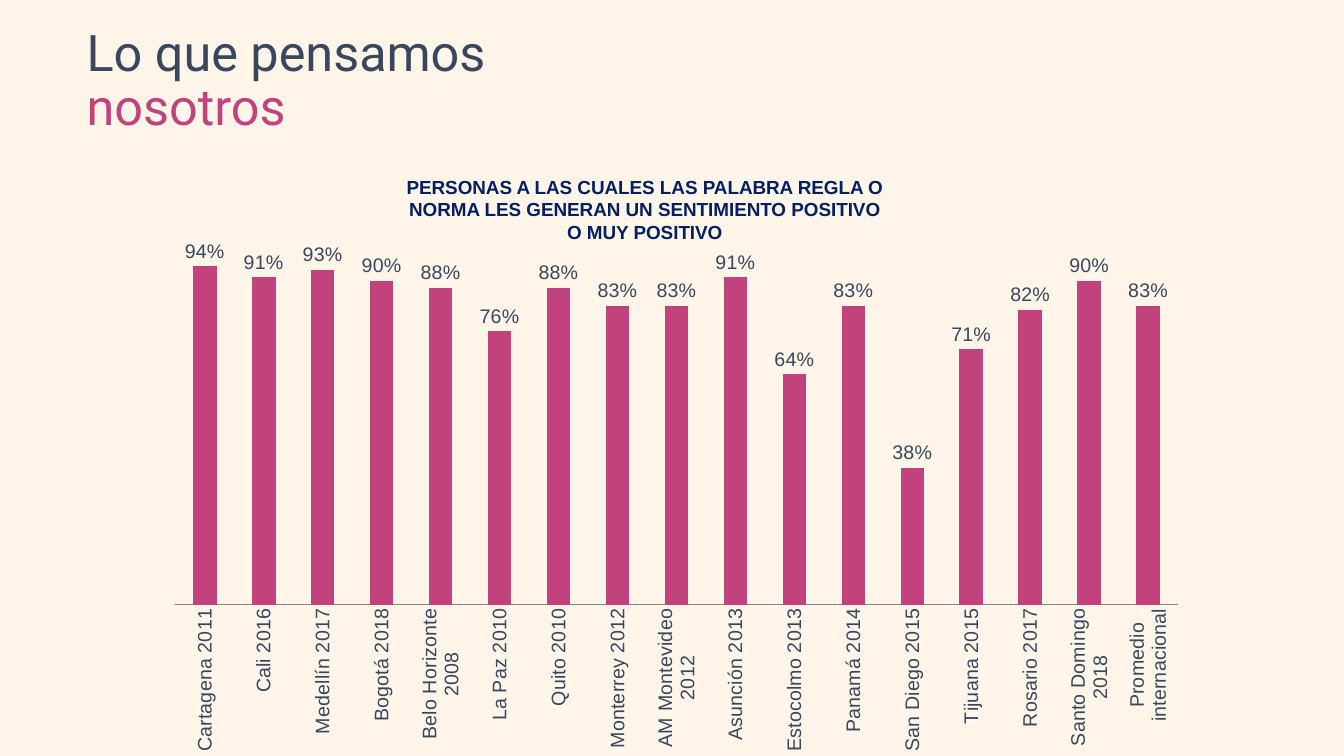
"""Build a slide with a column chart of positive feelings towards rules by city."""
from lxml import etree
from pptx import Presentation
from pptx.chart.data import CategoryChartData
from pptx.dml.color import RGBColor
from pptx.enum.chart import XL_CHART_TYPE, XL_LABEL_POSITION, XL_TICK_MARK
from pptx.enum.text import MSO_ANCHOR, PP_ALIGN
from pptx.oxml.ns import qn
from pptx.util import Inches, Pt

COLUMNS = XL_CHART_TYPE.COLUMN_CLUSTERED
OUTSIDE = XL_LABEL_POSITION.OUTSIDE_END
NO_TICK = XL_TICK_MARK.NONE
MIDDLE = MSO_ANCHOR.MIDDLE
LEFT, CENTER = PP_ALIGN.LEFT, PP_ALIGN.CENTER

CREAM, SLATE, PINK, NAVY, GRAY = "FFF5E9", "38465E", "C2427E", "002060", "868686"
PERCENT = "###0%"

TITLE_LINES = [("Lo que pensamos", SLATE), ("nosotros", PINK)]
HEADING = ("PERSONAS A LAS CUALES LAS PALABRA REGLA O NORMA LES GENERAN "
           "UN SENTIMIENTO POSITIVO O MUY POSITIVO")
CITIES = [
    ("Cartagena 2011", 0.94), ("Cali 2016", 0.91), ("Medellín 2017", 0.93),
    ("Bogotá 2018", 0.90), ("Belo Horizonte 2008", 0.88), ("La Paz 2010", 0.76),
    ("Quito 2010", 0.88), ("Monterrey 2012", 0.83), ("AM Montevideo 2012", 0.83),
    ("Asunción 2013", 0.91), ("Estocolmo 2013", 0.64), ("Panamá 2014", 0.83),
    ("San Diego 2015", 0.38), ("Tijuana 2015", 0.71), ("Rosario 2017", 0.82),
    ("Santo Domingo 2018", 0.90), ("Promedio internacional", 0.83),
]
LONGEST_LINE = 14

TITLE_BOX = (0.76, 0.09, 5.23, 1.45)
HEADING_BOX = (3.9, 1.69, 5, 0.78)
CHART_BOX = (1.53, 2.32, 10.35, 5.24)
PLOT_BOX = (1.74, 2.43, 9.95, 3.57)


def color(value):
    return RGBColor.from_string(value)


def inches(box):
    return [Inches(length) for length in box]


def style(font, name, size, value, bold=False):
    font.name, font.size, font.bold = name, Pt(size), bold
    font.color.rgb = color(value)


def wrap(city):
    return city if len(city) <= LONGEST_LINE else "\n".join(city.rsplit(" ", 1))


def add_title(page):
    title = page.shapes.title
    title.left, title.top, title.width, title.height = inches(TITLE_BOX)
    frame = title.text_frame
    frame.vertical_anchor = MIDDLE
    frame.text = "\n".join(text for text, value in TITLE_LINES)
    for para, (text, value) in zip(frame.paragraphs, TITLE_LINES):
        para.alignment, para.line_spacing = LEFT, 0.9
        style(para.font, "Roboto", 36, value)


def add_heading(page):
    frame = page.shapes.add_textbox(*inches(HEADING_BOX)).text_frame
    frame.word_wrap = True
    para = frame.paragraphs[0]
    para.text, para.alignment = HEADING, CENTER
    style(para.font, "Arial", 13.5, NAVY, bold=True)


def place_plot(chart):
    area = chart.plots[0]._element.getparent()
    for old in area.findall(qn("c:layout")):
        area.remove(old)
    layout = etree.Element(qn("c:layout"))
    area.insert(0, layout)
    manual = etree.SubElement(layout, qn("c:manualLayout"))
    left, top, width, height = CHART_BOX
    plot_left, plot_top, plot_width, plot_height = PLOT_BOX
    settings = {
        "layoutTarget": "inner", "xMode": "edge", "yMode": "edge",
        "x": (plot_left - left) / width, "y": (plot_top - top) / height,
        "w": plot_width / width, "h": plot_height / height,
    }
    for name, value in settings.items():
        etree.SubElement(manual, qn("c:" + name)).set("val", str(value))


def add_chart(page):
    data = CategoryChartData(number_format=PERCENT)
    data.categories = [wrap(city) for city, share in CITIES]
    data.add_series("Series 1", [share for city, share in CITIES])
    chart = page.shapes.add_chart(COLUMNS, *inches(CHART_BOX), data).chart
    chart.has_legend = chart.has_title = False
    style(chart.font, "Arial", 14, SLATE)

    plot = chart.plots[0]
    plot.gap_width, plot.overlap, plot.vary_by_categories = 150, -25, False
    fill = plot.series[0].format.fill
    fill.solid()
    fill.fore_color.rgb = color(PINK)
    plot.has_data_labels = True
    labels = plot.data_labels
    labels.show_value, labels.position = True, OUTSIDE
    labels.number_format, labels.number_format_is_linked = PERCENT, False
    style(labels.font, "Arial", 14, SLATE)

    shares = chart.value_axis
    shares.minimum_scale, shares.maximum_scale = 0, 1
    shares.has_major_gridlines = shares.visible = False
    cities = chart.category_axis
    cities.major_tick_mark = cities.minor_tick_mark = NO_TICK
    cities.format.line.color.rgb = color(GRAY)
    style(cities.tick_labels.font, "Arial", 14, SLATE)
    text_body = cities._element.find(qn("c:txPr")).find(qn("a:bodyPr"))
    text_body.set("rot", "-5400000")
    text_body.set("vert", "horz")
    place_plot(chart)


def main():
    deck = Presentation()
    deck.slide_width, deck.slide_height = Inches(13.34), Inches(7.5)
    page = deck.slides.add_slide(deck.slide_layouts[5])
    page.background.fill.solid()
    page.background.fill.fore_color.rgb = color(CREAM)
    add_title(page)
    add_heading(page)
    add_chart(page)
    deck.save("out.pptx")


if __name__ == "__main__":
    main()
